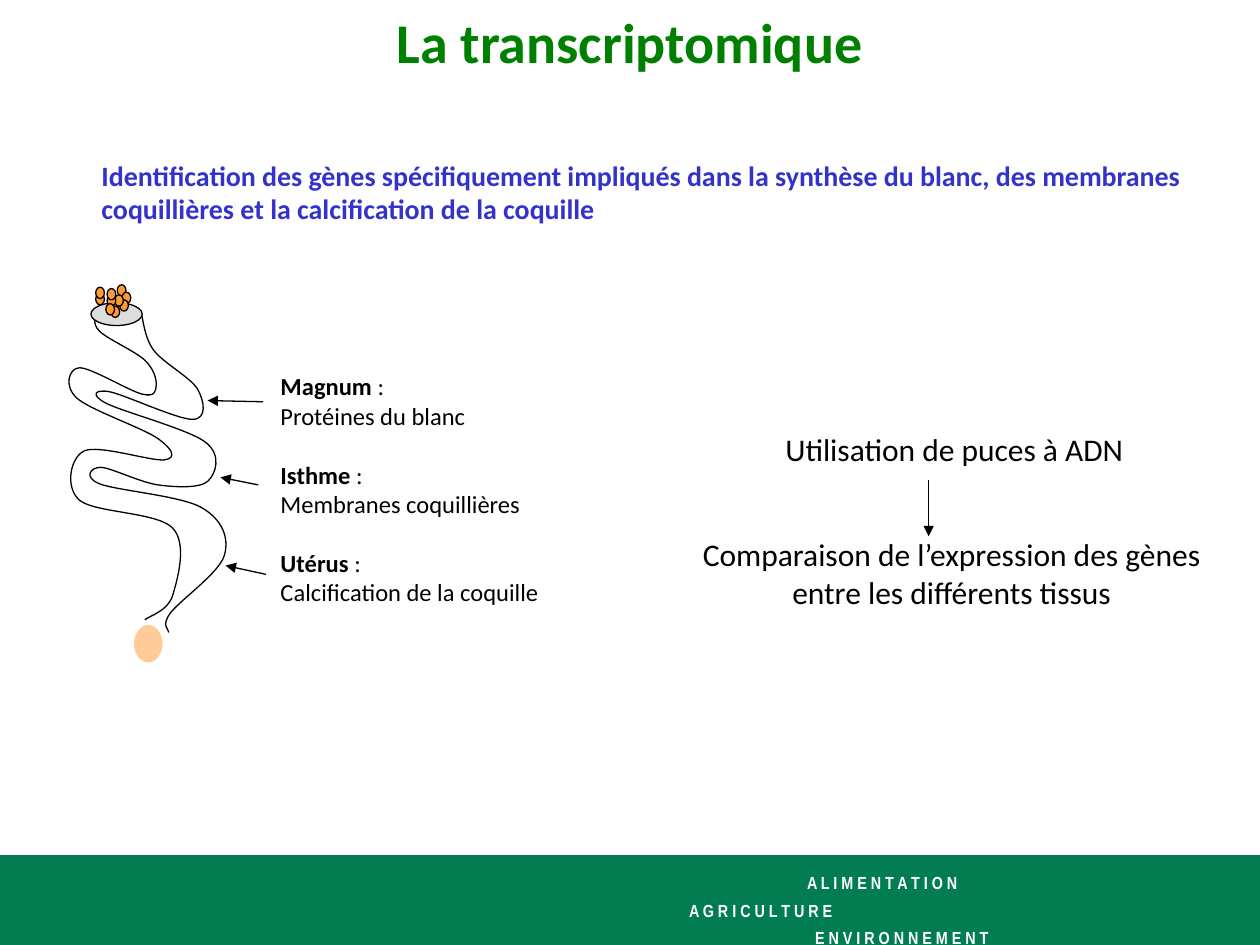
from lxml import etree
from pptx import Presentation
from pptx.dml.color import RGBColor
from pptx.enum import shapes, text
from pptx.oxml import ns
from pptx.util import Pt

COLORS = {
    "green": "008000", "band": "027D51", "blue": "3333CC", "black": "000000",
    "white": "FFFFFF", "grey": "DDDDDD", "orange": "FF9933", "egg": "FFCC99",
}
LINE = 0.75

# Knots of the two oviduct walls, in points from the corner of the drawing
LEFT_WALL = [
    (18.7, 15.8), (20.9, 26.6), (46.8, 43.2), (53.3, 57.6), (45.4, 62.6),
    (9.4, 47.5), (7.9, 64.8), (54, 87.8), (58.3, 100.1), (12.2, 95),
    (9.4, 123.1), (62.6, 139), (62.6, 177.8), (46.8, 191.5),
]
RIGHT_WALL = [
    (44.6, 15.8), (51.8, 37.4), (77, 59.8), (74.2, 77), (26.6, 61.2),
    (24.5, 67.7), (81.4, 90), (82.8, 112.3), (54.7, 114.5), (21.6, 104.4),
    (20.9, 113.8), (79.2, 127.4), (92.2, 154.8), (61.2, 187.9), (60.5, 198.7),
]
FOLLICLES = [
    (31, 0), (33.8, 4.3), (32.4, 8.6), (29.5, 5.8), (27.4, 12.2),
    (25.2, 5.8), (25.2, 2.2), (24.5, 10.8), (18.7, 5), (18.7, 1.4),
]
TISSUES = [
    ("Magnum ", "Protéines du blanc"),
    ("Isthme ", "Membranes coquillières"),
    ("Utérus ", "Calcification de la coquille"),
]
FOOTER = [
    ("A L I M E N T A T I O N", 72),
    ("A G R I C U L T U R E", 4.5),
    ("E N V I R O N N E M E N T", 76.5),
]


def rgb(name):
    return RGBColor.from_string(COLORS[name])


def add_run(p, words, size, color="black", bold=False, font="Calibri"):
    r = p.add_run()
    r.text = words
    r.font.name, r.font.size, r.font.bold = font, Pt(size), bold
    r.font.color.rgb = rgb(color)


def add_box(s, box, wrap=True):
    tf = s.shapes.add_textbox(*map(Pt, box)).text_frame
    tf.word_wrap = wrap
    return tf


def add_text(s, box, words, size, color="black", bold=False, align=text.PP_ALIGN.LEFT):
    p = add_box(s, box).paragraphs[0]
    p.alignment = align
    add_run(p, words, size, color, bold)


def add_shape(s, kind, box, fill, line=None):
    sp = s.shapes.add_shape(kind, *map(Pt, box))
    sp.shadow.inherit = False
    sp.fill.solid()
    sp.fill.fore_color.rgb = rgb(fill)
    if line:
        sp.line.color.rgb = rgb(line)
        sp.line.width = Pt(LINE)
    else:
        sp.line.fill.background()


def add_arrow(s, start, end):
    c = s.shapes.add_connector(shapes.MSO_CONNECTOR.STRAIGHT, *map(Pt, start + end))
    c.line.color.rgb = rgb("black")
    c.line.width = Pt(LINE)
    etree.SubElement(c.line._get_or_add_ln(), ns.qn("a:tailEnd"), type="triangle")
    etree.SubElement(c._element.spPr, ns.qn("a:effectLst"))


def smooth(sp):
    """Turn the straight segments of a freeform into Catmull-Rom curves."""
    knots = [(int(pt.get("x")), int(pt.get("y"))) for pt in sp._element.iter(ns.qn("a:pt"))]
    padded = [knots[0], *knots, knots[-1]]
    segments = list(sp._element.iter(ns.qn("a:lnTo")))
    for segment, a, b, c, d in zip(segments, padded, padded[1:], padded[2:], padded[3:]):
        leave = [q + (r - p) / 6 for p, q, r in zip(a, b, c)]
        arrive = [q - (r - p) / 6 for p, q, r in zip(b, c, d)]
        curve = etree.Element(ns.qn("a:cubicBezTo"))
        for x, y in (leave, arrive, c):
            etree.SubElement(curve, ns.qn("a:pt"), x=str(round(x)), y=str(round(y)))
        segment.getparent().replace(segment, curve)


def add_curve(s, left, top, knots):
    points = [(Pt(left + x), Pt(top + y)) for x, y in knots]
    builder = s.shapes.build_freeform(*points[0])
    builder.add_line_segments(points[1:], close=False)
    sp = builder.convert_to_shape()
    smooth(sp)
    sp.shadow.inherit = False
    sp.fill.background()
    sp.line.color.rgb = rgb("black")
    sp.line.width = Pt(LINE)


def place_title(s, box):
    title = s.shapes.title
    title.left, title.top, title.width, title.height = map(Pt, box)
    tf = title.text_frame
    tf.auto_size = text.MSO_AUTO_SIZE.NONE
    tf.vertical_anchor = text.MSO_ANCHOR.TOP
    p = tf.paragraphs[0]
    p.alignment = text.PP_ALIGN.CENTER
    add_run(p, "La transcriptomique", 32, "green", True)


def place_footer(s, box):
    left, top, width, height = box
    add_shape(s, shapes.MSO_SHAPE.RECTANGLE, box, "band")
    tf = add_box(s, (left + 382.2, top + 2.6, 246.2, height - 2.6))
    for i, (words, indent) in enumerate(FOOTER):
        p = tf.add_paragraph() if i else tf.paragraphs[0]
        p.line_spacing = 1.3
        p._p.get_or_add_pPr().set("marL", str(Pt(indent)))
        add_run(p, words, 10, "white", True, "Arial Narrow")


def place_oviduct(s, left, top):
    for wall in (LEFT_WALL, RIGHT_WALL):
        add_curve(s, left, top, wall)
    oval = shapes.MSO_SHAPE.OVAL
    add_shape(s, oval, (left + 16, top + 10.3, 29.3, 13), "grey", "black")
    for x, y in FOLLICLES:
        add_shape(s, oval, (left + x, top + y, 5, 6.5), "orange", "black")
    add_shape(s, oval, (left + 40.1, top + 194, 17.2, 22.3), "egg", "white")


def place_tissues(s, box):
    left, top = box[:2]
    tf = add_box(s, box, wrap=False)
    for i, (name, role) in enumerate(TISSUES):
        p = tf.add_paragraph() if i else tf.paragraphs[0]
        if i:
            p.space_before = Pt(16.8)
        add_run(p, name, 14, bold=True)
        add_run(p, ":", 14)
        add_run(tf.add_paragraph(), role, 14)
    # Arrows from the labels to the oviduct
    for start, end in (((-2.9, 20.9), (-34.6, 20.2)),
                       ((-5.6, 68.4), (-27.2, 64.1)),
                       ((-1.2, 119.5), (-24.3, 114.5))):
        add_arrow(s, (left + start[0], top + start[1]), (left + end[0], top + end[1]))


def place_method(s, box):
    left, top, width, height = box
    center = text.PP_ALIGN.CENTER
    add_text(s, (left + 57.7, top, 208.8, 29), "Utilisation de puces à ADN", 18, align=center)
    add_arrow(s, (left + 147.4, top + 32.4), (left + 147.4, top + 64.6))
    add_text(s, (left, top + 60.5, width, height - 60.5),
             "Comparaison de l’expression des gènes entre les différents tissus",
             18, align=center)


def main():
    prs = Presentation()
    prs.slide_width, prs.slide_height = Pt(720), Pt(540)
    s = prs.slides.add_slide(prs.slide_layouts[5])
    place_footer(s, (0, 488.7, 720, 51.3))
    place_title(s, (0, 0.7, 720, 45.4))
    place_oviduct(s, 36, 162.7)
    place_tissues(s, (153.2, 208.7, 162.7, 141.1))
    place_method(s, (383.3, 241.9, 321.1, 110.9))
    add_text(s, (50.9, 86.8, 649.4, 46.1),
             "Identification des gènes spécifiquement impliqués dans la synthèse du blanc, "
             "des membranes coquillières et la calcification de la coquille",
             16, "blue", True)
    prs.save("out.pptx")


if __name__ == "__main__":
    main()
